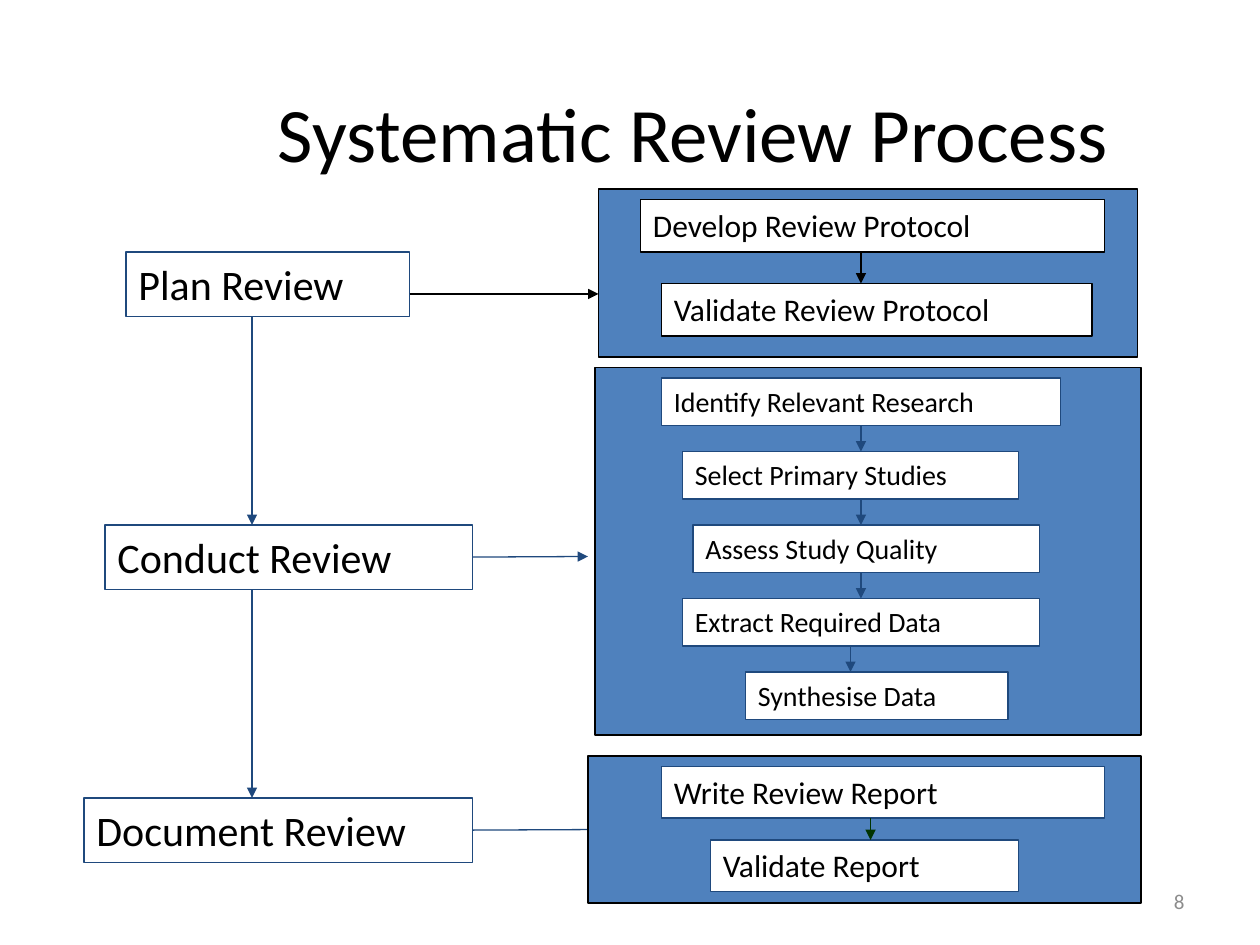
from dataclasses import dataclass
from itertools import pairwise
from typing import Optional

from lxml.etree import SubElement
from pptx import Presentation
from pptx.dml.color import RGBColor
from pptx.enum.shapes import MSO_CONNECTOR as Connector, MSO_SHAPE as Preset
from pptx.enum.text import MSO_ANCHOR as Anchor, PP_ALIGN as Align
from pptx.oxml.ns import qn
from pptx.util import Pt

TOP, LEFT, BOTTOM, RIGHT = range(4)


@dataclass(frozen=True)
class Theme:
    font: str = "Calibri"
    black: str = "000000"
    white: str = "FFFFFF"
    panel: str = "4F81BD"
    navy: str = "1F497D"
    green: str = "003300"
    grey: str = "8C8C8C"
    title_size: float = 44
    stage_size: float = 24
    large_step_size: float = 18
    small_step_size: float = 16
    number_size: float = 12
    line_width: float = 0.75


THEME = Theme()


@dataclass(frozen=True)
class Box:
    left: float
    top: float
    width: float
    height: float

    def side(self, site: int) -> tuple[float, float]:
        """Middle of the side with this connection site number."""
        middle_x, middle_y = self.left + self.width / 2, self.top + self.height / 2
        return {TOP: (middle_x, self.top), LEFT: (self.left, middle_y),
                BOTTOM: (middle_x, self.top + self.height),
                RIGHT: (self.left + self.width, middle_y)}[site]


@dataclass(frozen=True)
class Step:
    text: str
    left: float
    width: float
    arrow_x: Optional[float] = None


@dataclass(frozen=True)
class Stage:
    text: str
    box: Box
    panel: Box
    link_y: float
    link_end: float
    link_color: str
    steps: tuple[Step, ...]
    first_step_top: float
    step_pitch: float
    step_height: float
    step_size: float
    step_line: str
    arrow_color: str


@dataclass(frozen=True)
class Drawn:
    shape: object
    box: Box


STAGES = (
    Stage("Plan Review", Box(72, 144, 162, 36.7), Box(342, 108, 308, 96),
          168, 342, THEME.black,
          (Step("Develop Review Protocol", 366, 265, 492),
           Step("Validate Review Protocol", 378, 246)),
          114, 48, 30, THEME.large_step_size, THEME.black, THEME.black),
    Stage("Conduct Review", Box(60, 300, 210, 36.7), Box(340, 210, 312, 210),
          318, 336, THEME.navy,
          (Step("Identify Relevant Research", 378, 228, 492),
           Step("Select Primary Studies", 390, 192, 492),
           Step("Assess Study Quality", 396, 198, 492),
           Step("Extract Required Data", 390, 204, 486),
           Step("Synthesise Data", 426, 150)),
          216, 42, 27.2, THEME.small_step_size, THEME.navy, THEME.navy),
    Stage("Document Review", Box(48, 456, 222, 36.7), Box(336, 432, 316, 84),
          474, 348, THEME.navy,
          (Step("Write Review Report", 378, 253, 497.5),
           Step("Validate Report", 406, 176)),
          438, 42, 29.5, THEME.large_step_size, THEME.navy, THEME.green),
)
STAGE_ARROW_X = 144


def color(value: str) -> RGBColor:
    return RGBColor.from_string(value)


def write_text(shape, text: str, *, size: float, text_color: str = THEME.black,
               align: Align = Align.LEFT, anchor: Anchor = Anchor.TOP) -> None:
    frame = shape.text_frame
    frame.word_wrap = True
    frame.vertical_anchor = anchor
    paragraph = frame.paragraphs[0]
    paragraph.alignment = align
    run = paragraph.add_run()
    run.text = text
    run.font.name = THEME.font
    run.font.size = Pt(size)
    run.font.color.rgb = color(text_color)


def add_label(slide, box: Box, text: str, **text_format) -> None:
    shape = slide.shapes.add_textbox(Pt(box.left), Pt(box.top), Pt(box.width), Pt(box.height))
    write_text(shape, text, anchor=Anchor.MIDDLE, **text_format)


def add_box(slide, box: Box, line: str, fill: Optional[str] = None) -> Drawn:
    shape = slide.shapes.add_shape(Preset.RECTANGLE, Pt(box.left), Pt(box.top),
                                   Pt(box.width), Pt(box.height))
    shape.shadow.inherit = False
    if fill is None:
        shape.fill.background()
    else:
        shape.fill.solid()
        shape.fill.fore_color.rgb = color(fill)
    shape.line.color.rgb = color(line)
    shape.line.width = Pt(THEME.line_width)
    return Drawn(shape, box)


def at_side_middle(point: tuple[float, float], box: Box, site: int) -> bool:
    return all(abs(a - b) < 1 for a, b in zip(point, box.side(site)))


def add_arrow(slide, start: tuple[float, float], end: tuple[float, float], line: str,
              source: Drawn, source_site: int,
              target: Optional[Drawn] = None, target_site: int = TOP) -> None:
    """Draw an arrow, joined to a box wherever it meets the middle of a side."""
    arrow = slide.shapes.add_connector(Connector.STRAIGHT, *map(Pt, start + end))
    if at_side_middle(start, source.box, source_site):
        arrow.begin_connect(source.shape, source_site)
    if target and at_side_middle(end, target.box, target_site):
        arrow.end_connect(target.shape, target_site)
    arrow.line.color.rgb = color(line)
    arrow.line.width = Pt(THEME.line_width)
    SubElement(arrow.line._get_or_add_ln(), qn("a:tailEnd"), type="triangle")
    SubElement(arrow._element.spPr, qn("a:effectLst"))


def add_down_arrow(slide, x: float, upper: Drawn, lower: Drawn, line: str) -> None:
    start = (x, upper.box.side(BOTTOM)[1])
    add_arrow(slide, start, (x, lower.box.top), line, upper, BOTTOM, lower, TOP)


def add_steps(slide, stage: Stage) -> None:
    boxes = []
    for index, step in enumerate(stage.steps):
        top = stage.first_step_top + index * stage.step_pitch
        drawn = add_box(slide, Box(step.left, top, step.width, stage.step_height),
                        stage.step_line, THEME.white)
        write_text(drawn.shape, step.text, size=stage.step_size)
        boxes.append(drawn)
    for step, (upper, lower) in zip(stage.steps, pairwise(boxes)):
        add_down_arrow(slide, step.arrow_x, upper, lower, stage.arrow_color)


def add_stage(slide, stage: Stage) -> Drawn:
    """Draw the stage box, its link, and the panel of steps over the link's end."""
    drawn = add_box(slide, stage.box, THEME.navy)
    write_text(drawn.shape, stage.text, size=THEME.stage_size)
    start = (stage.box.side(RIGHT)[0], stage.link_y)
    add_arrow(slide, start, (stage.link_end, stage.link_y), stage.link_color, drawn, RIGHT)
    add_box(slide, stage.panel, THEME.black, THEME.panel)
    add_steps(slide, stage)
    return drawn


def main() -> None:
    presentation = Presentation()
    presentation.slide_width, presentation.slide_height = Pt(720), Pt(540)
    slide = presentation.slides.add_slide(presentation.slide_layouts[6])
    add_label(slide, Box(516, 500.5, 168, 28.75), "8", size=THEME.number_size,
              text_color=THEME.grey, align=Align.RIGHT)
    add_label(slide, Box(120, 30, 552, 90), "Systematic Review Process",
              size=THEME.title_size, align=Align.CENTER)
    stage_boxes = [add_stage(slide, stage) for stage in STAGES]
    for upper, lower in pairwise(stage_boxes):
        add_down_arrow(slide, STAGE_ARROW_X, upper, lower, THEME.navy)
    presentation.save("out.pptx")


if __name__ == "__main__":
    main()
